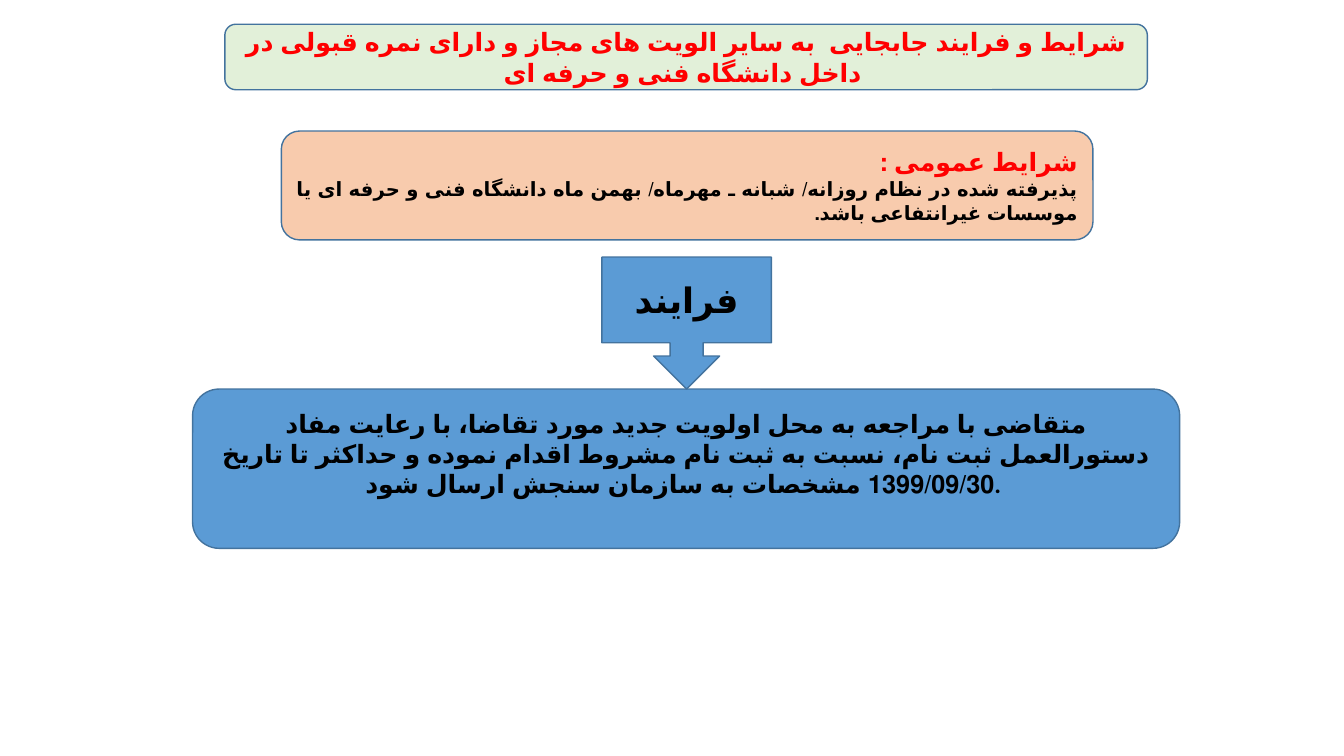
import pptx
import pptx.util
import pptx.dml.color
import pptx.enum.shapes
import pptx.enum.text

Inches = pptx.util.Inches
Pt = pptx.util.Pt
RGB = pptx.dml.color.RGBColor.from_string
SHAPES = pptx.enum.shapes.MSO_SHAPE
ALIGN = pptx.enum.text.PP_ALIGN

COLORS = {
    "green": "E2F0D9",
    "peach": "F8CBAD",
    "blue": "5B9BD5",
    "outline": "43739E",
    "red": "FF0000",
    "black": "000000",
}

deck = pptx.Presentation()
deck.slide_width = Inches(13.33)
deck.slide_height = Inches(7.5)
slide = deck.slides.add_slide(deck.slide_layouts[6])

title = "شرایط و فرایند جابجایی  به سایر الویت های مجاز و دارای نمره قبولی در داخل دانشگاه فنی و حرفه ای "
conditions_heading = "شرایط عمومی :"
conditions = "پذیرفته شده در نظام روزانه/ شبانه ـ مهرماه/ بهمن ماه دانشگاه فنی و حرفه ای یا موسسات غیرانتفاعی باشد."
procedure = "متقاضی با مراجعه به محل اولویت جدید مورد تقاضا، با رعایت مفاد دستورالعمل ثبت نام، نسبت به ثبت نام مشروط اقدام نموده و حداکثر تا تاریخ 1399/09/30 مشخصات به سازمان سنجش ارسال شود. "

steps = [
    (SHAPES.ROUNDED_RECTANGLE, (2.23, 0.24, 9.15, 0.65), "green", ALIGN.CENTER, 0.05,
     [(title, 18, "red")]),
    (SHAPES.ROUNDED_RECTANGLE, (2.79, 1.3, 8.05, 1.08), "peach", ALIGN.JUSTIFY, 0.05,
     [(conditions_heading, 18, "red"), (conditions, 14, "black")]),
    (SHAPES.ROUNDED_RECTANGLE, (1.91, 3.86, 9.79, 1.58), "blue", ALIGN.CENTER, 0.35,
     [(procedure, 18, "black")]),
    (SHAPES.DOWN_ARROW_CALLOUT, (5.97, 2.55, 1.68, 1.31), "blue", ALIGN.CENTER, 0.05,
     [("فرایند", 25, "black")]),
]

for outline, place, fill, alignment, bottom_margin, lines in steps:
    step = slide.shapes.add_shape(outline, *map(Inches, place))
    step.shadow.inherit = False
    step.fill.solid()
    step.fill.fore_color.rgb = RGB(COLORS[fill])
    step.line.color.rgb = RGB(COLORS["outline"])
    step.line.width = Pt(1)
    frame = step.text_frame
    frame_format = {
        "word_wrap": True,
        "vertical_anchor": pptx.enum.text.MSO_ANCHOR.MIDDLE,
        "margin_bottom": Inches(bottom_margin),
    }
    for name, value in frame_format.items():
        setattr(frame, name, value)
    for number, (wording, size, color) in enumerate(lines):
        paragraph = frame.add_paragraph() if number else frame.paragraphs[0]
        paragraph.alignment = alignment
        if alignment == ALIGN.JUSTIFY:
            paragraph._p.get_or_add_pPr().set("rtl", "1")
        run = paragraph.add_run()
        run.text = wording
        run._r.get_or_add_rPr().set("lang", "fa-IR")
        for name, value in {"name": "Calibri", "size": Pt(size), "bold": True}.items():
            setattr(run.font, name, value)
        run.font.color.rgb = RGB(COLORS[color])

deck.save("out.pptx")
